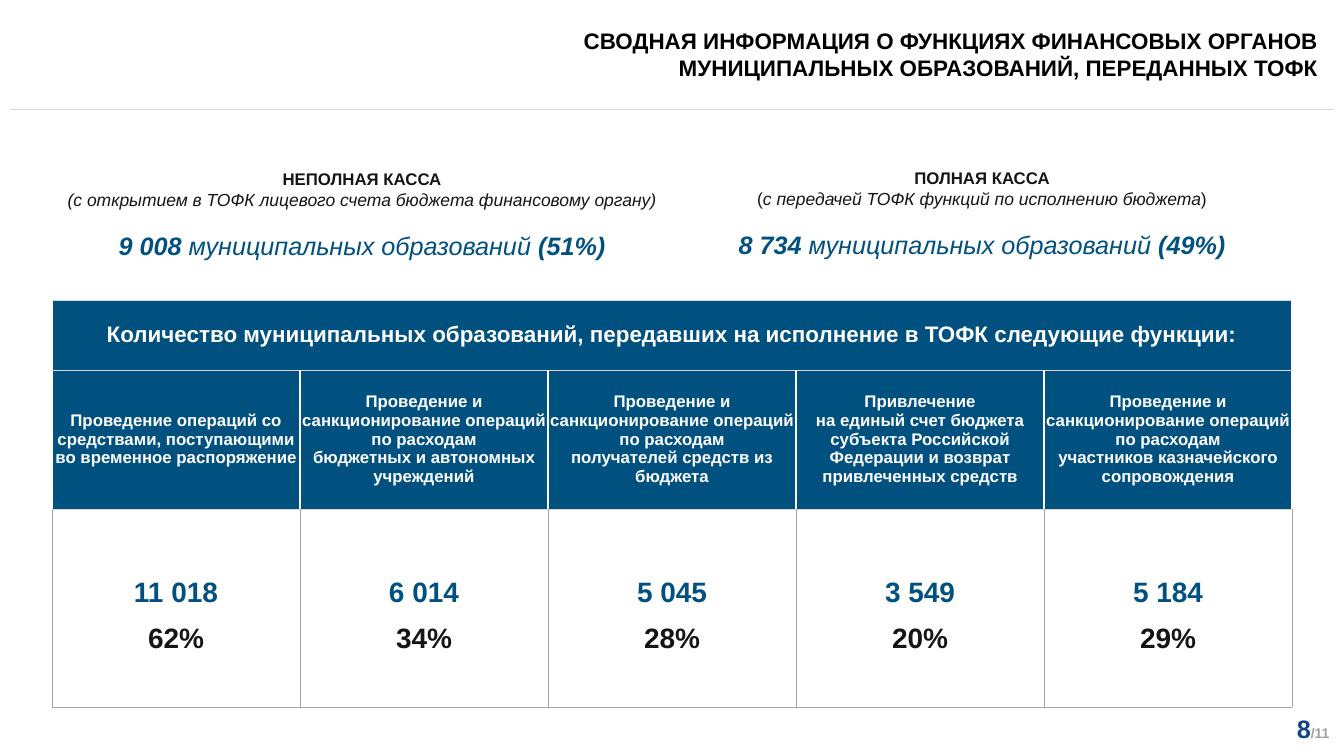
from dataclasses import dataclass

from lxml import etree
from pptx import Presentation
from pptx import util as u
from pptx.dml.color import RGBColor
from pptx.enum import shapes, text
from pptx.oxml import ns


@dataclass(frozen=True)
class Theme:
    font: str = "Arial"
    blue: str = "005180"
    page_blue: str = "11437F"
    page_gray: str = "A0A0A0"
    ink: str = "151515"
    black: str = "000000"
    white: str = "FFFFFF"
    rule: str = "D9D9D9"
    grid: str = "A7A69B"
    heading: int = 32
    label: int = 24
    caption: int = 25
    count: int = 36
    value: int = 40
    page_total: int = 20


@dataclass(frozen=True)
class Run:
    content: str
    bold: bool = False
    italic: bool = False
    size: int | None = None
    color: str | None = None


@dataclass(frozen=True)
class CashModel:
    name: str
    caption: tuple[Run, ...]
    count: str
    share: str
    left: float
    top: float


@dataclass(frozen=True)
class Function:
    lines: tuple[str, ...]
    count: str
    share: str


@dataclass(frozen=True)
class Border:
    color: str
    width: float


THEME = Theme()
WIDTH, HEIGHT = 67.74, 38.1
LEFT, COLUMN = 2.62, 12.5
ROWS = (3.5, 7, 10)
HALF = COLUMN * 5 / 2
SANCTION = "Проведение и санкционирование операций по расходам"
WHITE_SIDE = Border(THEME.white, 2.25)
THIN_RULE = Border(THEME.rule, 0.25)
GRID_LINE = Border(THEME.grid, 1)
HEADER_BORDERS = {"L": WHITE_SIDE, "R": WHITE_SIDE, "T": THIN_RULE, "B": THIN_RULE}
BODY_BORDERS = {"L": GRID_LINE, "R": GRID_LINE, "T": THIN_RULE, "B": GRID_LINE}

MODELS = (
    CashModel("НЕПОЛНАЯ КАССА",
              (Run("(с открытием в ТОФК лицевого счета бюджета финансовому органу)", italic=True),),
              "9 008", "(51%)", LEFT, 8.4),
    CashModel("ПОЛНАЯ КАССА",
              (Run("("), Run("с передачей ТОФК функций по исполнению бюджета", italic=True), Run(")")),
              "8 734", "(49%)", LEFT + HALF, 8.33),
)
FUNCTIONS = (
    Function(("Проведение операций со средствами, поступающими во временное распоряжение",),
             "11 018", "62%"),
    Function((SANCTION, "бюджетных и автономных учреждений"), "6 014", "34%"),
    Function((SANCTION, "получателей средств из бюджета"), "5 045", "28%"),
    Function(("Привлечение",
              "на единый счет бюджета субъекта Российской Федерации и возврат привлеченных средств"),
             "3 549", "20%"),
    Function((SANCTION, "участников казначейского сопровождения"), "5 184", "29%"),
)


def style_font(font, size: int, color: str, bold: bool, italic: bool = False) -> None:
    font.name = THEME.font
    font.size = u.Pt(size)
    font.bold = bold
    font.italic = italic
    font.color.rgb = RGBColor.from_string(color)


def add_text_box(slide, left: float, top: float, width: float, height: float, grow: bool = True):
    frame = slide.shapes.add_textbox(u.Cm(left), u.Cm(top), u.Cm(width), u.Cm(height)).text_frame
    frame.word_wrap = True
    frame.auto_size = text.MSO_AUTO_SIZE.SHAPE_TO_FIT_TEXT if grow else text.MSO_AUTO_SIZE.NONE
    return frame


def fill_runs(paragraph, runs: tuple[Run, ...], size: int, color: str, alignment) -> None:
    paragraph.alignment = alignment
    for item in runs:
        run = paragraph.add_run()
        run.text = item.content
        style_font(run.font, item.size or size, item.color or color, item.bold, item.italic)


def add_title(slide) -> None:
    frame = add_text_box(slide, 0, 0, WIDTH, 5.44, grow=False)
    frame.vertical_anchor = text.MSO_ANCHOR.MIDDLE
    frame.margin_left = frame.margin_top = frame.margin_bottom = 0
    frame.margin_right = u.Cm(1.3)
    paragraph = frame.paragraphs[0]
    paragraph.text = ("СВОДНАЯ ИНФОРМАЦИЯ О ФУНКЦИЯХ ФИНАНСОВЫХ ОРГАНОВ\v"
                      "МУНИЦИПАЛЬНЫХ ОБРАЗОВАНИЙ, ПЕРЕДАННЫХ ТОФК")
    paragraph.alignment = text.PP_ALIGN.RIGHT
    style_font(paragraph.font, THEME.heading, THEME.black, True)


def add_title_rule(slide) -> None:
    rule = slide.shapes.add_connector(shapes.MSO_CONNECTOR.STRAIGHT,
                                      u.Cm(0.51), u.Cm(5.51), u.Cm(67.23), u.Cm(5.51))
    rule.line.color.rgb = RGBColor.from_string(THEME.rule)
    rule.line.width = u.Pt(1)
    etree.SubElement(rule.element.spPr, ns.qn("a:effectLst"))


def add_page_number(slide) -> None:
    frame = add_text_box(slide, 62.46, 35.81, 4.8, 1.8)
    fill_runs(frame.paragraphs[0],
              (Run("8", bold=True),
               Run("/11", bold=True, size=THEME.page_total, color=THEME.page_gray)),
              THEME.count, THEME.page_blue, text.PP_ALIGN.RIGHT)


def add_cash_model(slide, model: CashModel) -> None:
    frame = add_text_box(slide, model.left, model.top, HALF, 5.05)
    center = text.PP_ALIGN.CENTER
    fill_runs(frame.paragraphs[0], (Run(model.name, bold=True),), THEME.label, THEME.ink, center)
    fill_runs(frame.add_paragraph(), model.caption, THEME.caption, THEME.ink, center)
    total = frame.add_paragraph()
    total.space_before = u.Pt(29)
    fill_runs(total,
              (Run(model.count + " ", True, True),
               Run("муниципальных образований ", False, True),
               Run(model.share, True, True)),
              THEME.count, THEME.blue, center)


def fill_cell(cell, lines: tuple[str, ...], size: int, colors: tuple[str, ...],
              spacing: float | None = None) -> None:
    cell.vertical_anchor = text.MSO_ANCHOR.MIDDLE
    cell.text = "\n".join(lines)
    for paragraph, color in zip(cell.text_frame.paragraphs, colors):
        paragraph.alignment = text.PP_ALIGN.CENTER
        paragraph.line_spacing = spacing
        style_font(paragraph.font, size, color, True)


def frame_cell(cell, borders: dict[str, Border], fill: str | None) -> None:
    properties = cell._tc.get_or_add_tcPr()
    for side, border in borders.items():
        line = etree.SubElement(properties, ns.qn(f"a:ln{side}"), w=str(u.Pt(border.width)))
        solid = etree.SubElement(line, ns.qn("a:solidFill"))
        etree.SubElement(solid, ns.qn("a:srgbClr"), val=border.color)
    if fill is None:
        cell.fill.background()
        return
    cell.fill.solid()
    cell.fill.fore_color.rgb = RGBColor.from_string(fill)
    cell.margin_left = cell.margin_right = u.Cm(0.03)
    cell.margin_top = cell.margin_bottom = 0


def add_function_table(slide) -> None:
    count = len(FUNCTIONS)
    table = slide.shapes.add_table(len(ROWS), count, u.Cm(LEFT), u.Cm(15.14),
                                   u.Cm(COLUMN * count), u.Cm(sum(ROWS))).table
    table.first_row = table.horz_banding = False
    for row, height in zip(table.rows, ROWS):
        row.height = u.Cm(height)
    for index, function in enumerate(FUNCTIONS):
        table.columns[index].width = u.Cm(COLUMN)
        banner, header, body = (table.cell(row, index) for row in range(len(ROWS)))
        frame_cell(banner, HEADER_BORDERS, THEME.blue)
        frame_cell(header, HEADER_BORDERS, THEME.blue)
        frame_cell(body, BODY_BORDERS, None)
        fill_cell(header, function.lines, THEME.label, (THEME.white,) * 2)
        fill_cell(body, (function.count, function.share), THEME.value, (THEME.blue, THEME.ink), 1.5)
    table.cell(0, 0).merge(table.cell(0, count - 1))
    fill_cell(table.cell(0, 0),
              ("Количество муниципальных образований, передавших на исполнение в ТОФК следующие функции:",),
              THEME.heading, (THEME.white,))


def main() -> None:
    presentation = Presentation()
    presentation.slide_width, presentation.slide_height = u.Cm(WIDTH), u.Cm(HEIGHT)
    slide = presentation.slides.add_slide(presentation.slide_layouts[6])
    add_title_rule(slide)
    add_page_number(slide)
    add_function_table(slide)
    for model in MODELS:
        add_cash_model(slide, model)
    add_title(slide)
    presentation.save("out.pptx")


if __name__ == "__main__":
    main()
